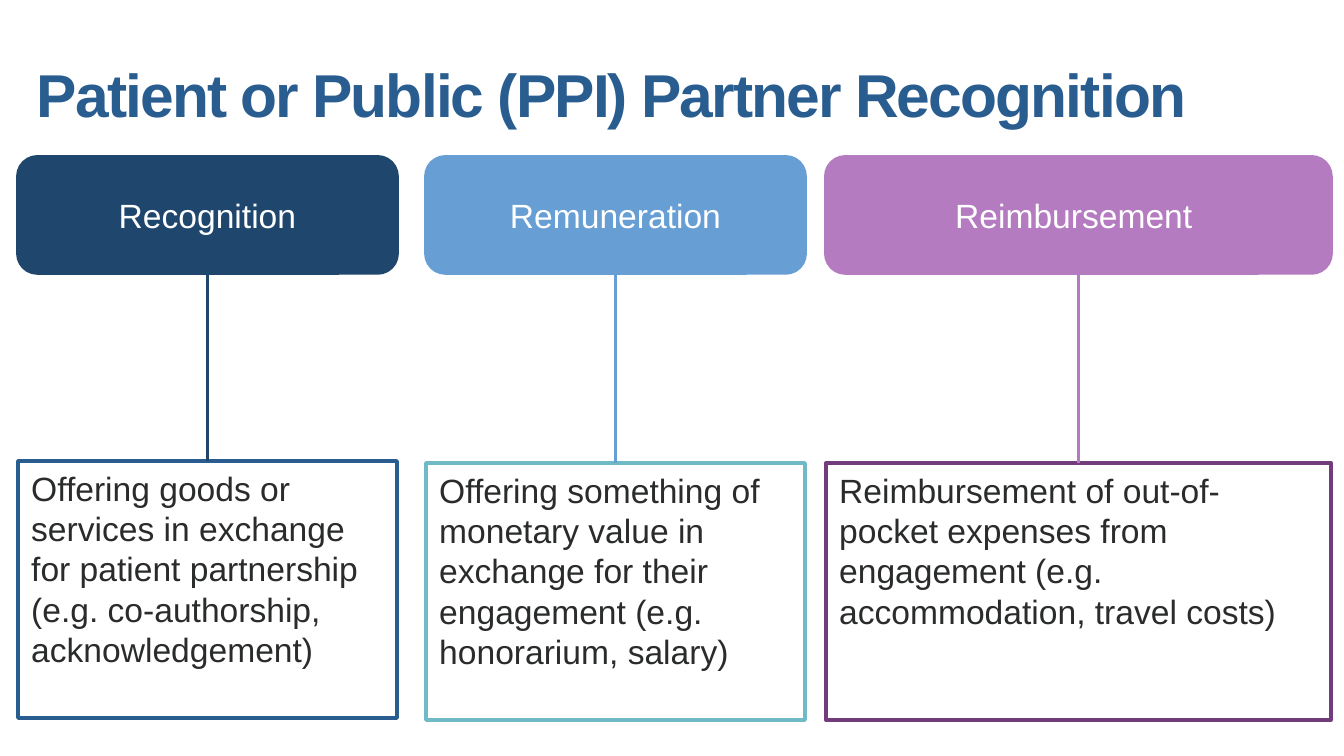
from lxml import etree
from pptx import Presentation
from pptx import util as u
from pptx.dml.color import RGBColor
from pptx.enum import shapes, text
from pptx.oxml.ns import qn

SCALE = 914400 / 134.4  # EMU in one px
FONT = "Arial"
COLORS = {
    "title": "295D90", "body": "2A2B2B", "white": "FFFFFF",
    "navy": "1F466C", "blue": "679ED4", "lilac": "B47BC0",
    "teal": "70B9C6", "purple": "723C7D",
}

TITLE = "Patient or Public (PPI) Partner Recognition"
# heading, description, heading colour, frame colour, left, width, frame top
COLUMNS = [
    ("Recognition",
     "Offering goods or services in exchange for patient partnership "
     "(e.g. co-authorship, acknowledgement)",
     "navy", "title", 18, 379, 461),
    ("Remuneration",
     "Offering something of monetary value in exchange for their "
     "engagement (e.g. honorarium, salary)",
     "blue", "teal", 426, 379, 463),
    ("Reimbursement ",
     "Reimbursement of out-of-pocket expenses from engagement "
     "(e.g. accommodation, travel costs)",
     "lilac", "purple", 826, 505, 463),
]
HEAD_TOP, HEAD_HEIGHT, FRAME_HEIGHT = 157, 116, 257


def px(value):
    return u.Emu(round(value * SCALE))


def color(name):
    return RGBColor.from_string(COLORS[name])


def write(shape, words, size, ink, align, anchor):
    frame = shape.text_frame
    frame.word_wrap = True
    frame.vertical_anchor = anchor
    frame.text = words
    para = frame.paragraphs[0]
    para.alignment = align
    span = para.runs[0]
    span.font.name = FONT
    span.font.size = u.Pt(size)
    span.font.color.rgb = color(ink)
    return span


def add_box(kind, left, top, width, height, fill, line):
    box = slide.shapes.add_shape(kind, px(left), px(top), px(width), px(height))
    box.shadow.inherit = False
    box.fill.solid()
    box.fill.fore_color.rgb = color(fill)
    box.line.color.rgb = color(line)
    box.line.width = u.Pt(2)
    return box


def add_link(x, top, bottom, ink):
    link = slide.shapes.add_connector(
        shapes.MSO_CONNECTOR.STRAIGHT, px(x), px(top), px(x), px(bottom))
    link.line.color.rgb = color(ink)
    link.line.width = u.Pt(2)
    etree.SubElement(link._element.spPr, qn("a:effectLst"))


deck = Presentation()
deck.slide_width, deck.slide_height = px(1344), px(756)
slide = deck.slides.add_slide(deck.slide_layouts[6])

# Title
title = slide.shapes.add_textbox(px(37), px(-16), px(1197), px(146))
frame = title.text_frame
frame.margin_left = frame.margin_right = frame.margin_top = frame.margin_bottom = 0
span = write(title, TITLE, 32.4, "title", text.PP_ALIGN.LEFT, text.MSO_ANCHOR.BOTTOM)
span.font.bold = True
span.font._element.set("spc", "-100")

# Columns: heading, framed description and the line joining them
for heading, description, tone, edge, left, width, frame_top in COLUMNS:
    head = add_box(shapes.MSO_SHAPE.ROUNDED_RECTANGLE,
                   left, HEAD_TOP, width, HEAD_HEIGHT, tone, tone)
    write(head, heading, 18, "white", text.PP_ALIGN.CENTER, text.MSO_ANCHOR.MIDDLE)
    card = add_box(shapes.MSO_SHAPE.RECTANGLE,
                   left, frame_top, width, FRAME_HEIGHT, "white", edge)
    write(card, description, 18, "body", text.PP_ALIGN.LEFT, text.MSO_ANCHOR.TOP)
    add_link(left + width / 2, HEAD_TOP + HEAD_HEIGHT, frame_top, tone)

deck.save("out.pptx")
